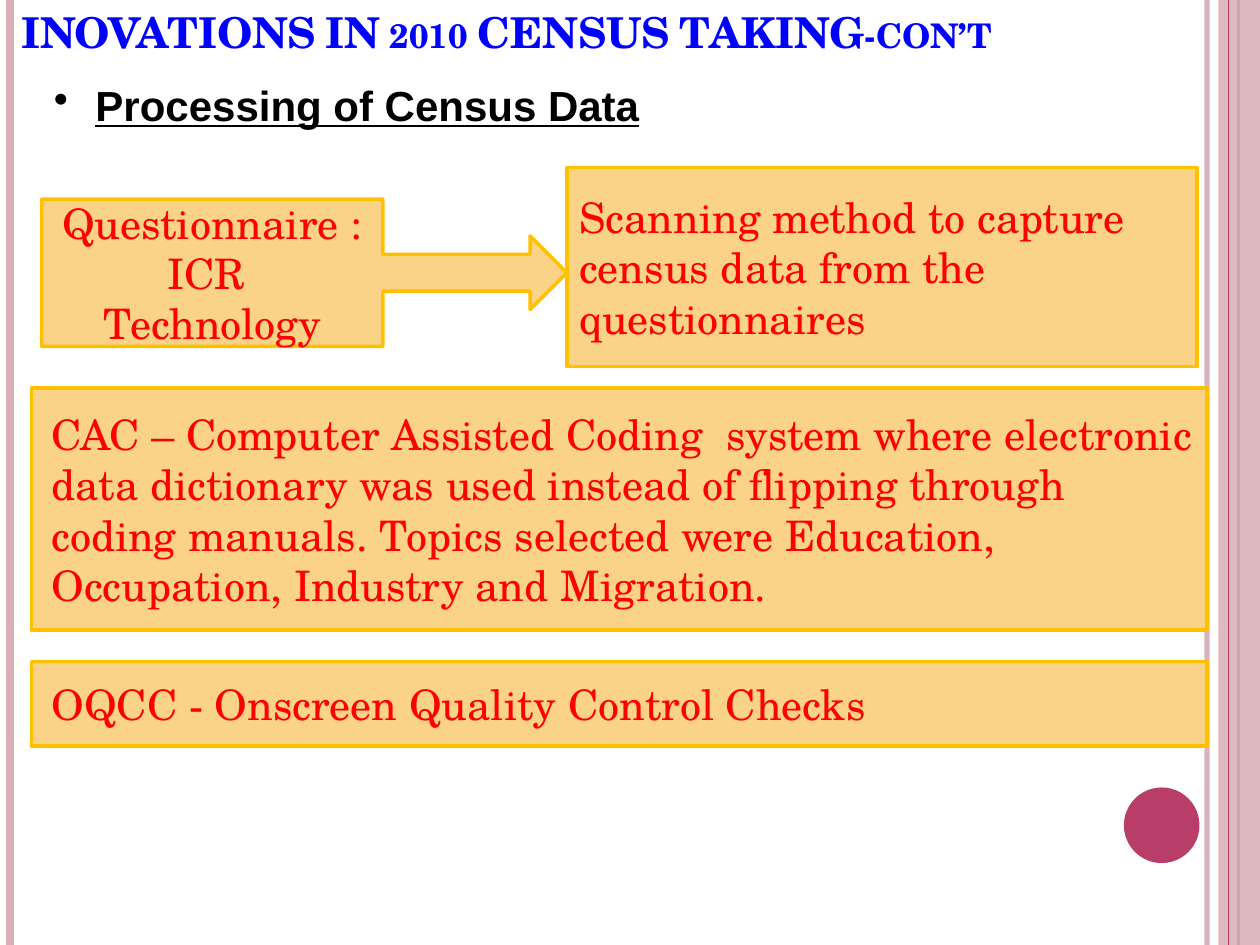
from dataclasses import dataclass
from typing import NamedTuple

from lxml.etree import SubElement as Sub
from pptx import Presentation
from pptx.dml.color import RGBColor as Rgb
from pptx.enum.shapes import MSO_CONNECTOR as Link, MSO_SHAPE as Kind
from pptx.enum.text import MSO_ANCHOR as Anchor, PP_ALIGN as Align
from pptx.oxml.ns import qn
from pptx.util import Inches, Pt


@dataclass(frozen=True)
class Theme:
    rose: str = "D8AFB9"
    wine: str = "B83D68"
    sand: str = "FBD388"
    gold: str = "FFC000"
    red: str = "FF0000"
    blue: str = "0000FF"
    black: str = "000000"
    serif: str = "TeX Gyre Schola"
    sans: str = "Arial"
    head: float = 24.3
    body: float = 24
    edge: float = 2


class Stripe(NamedTuple):
    x: float
    color: str
    width: float
    alpha: int = 100


class Box(NamedTuple):
    kind: Kind
    area: tuple
    text: str
    align: Align = Align.LEFT
    indent: float = 0
    inset: float = 0.1


LOOK = Theme()
WIDE, HIGH = 10, 7.5

STRIPES = [
    Stripe(9.58, LOOK.rose, 3, 93),
    Stripe(0.08, LOOK.rose, 4.5),
    Stripe(9.83, LOOK.wine, 1.5),
]
THIN = Stripe(9.75, LOOK.wine, 0.75)

BOXES = [
    Box(Kind.RECTANGLE, (4.5, 1.33, 5, 1.58),
        "Scanning method to capture census data from the questionnaires"),
    Box(Kind.RECTANGLE, (0.25, 3.08, 9.33, 1.92),
        "CAC – Computer Assisted Coding  system where electronic data "
        "dictionary was used instead of flipping through coding manuals. "
        "Topics selected were Education, Occupation, Industry and Migration.",
        indent=0.06),
    Box(Kind.RIGHT_ARROW_CALLOUT, (0.33, 1.58, 4.17, 1.17),
        "Questionnaire : ICR  Technology", Align.CENTER, inset=0.12),
    Box(Kind.RECTANGLE, (0.25, 5.25, 9.33, 0.67),
        "OQCC - Onscreen Quality Control Checks", indent=0.06),
]


def place(area: tuple) -> list:
    return [Inches(n) for n in area]


def fade(fill, alpha: int) -> None:
    """Set the opacity, in percent, of a solid fill element."""
    Sub(fill[0], qn("a:alpha"), val=str(alpha * 1000))


def write(frame, text: str, *, font: str = LOOK.serif, size: float = LOOK.body,
          color: str = LOOK.red, bold: bool = False, line: bool = False,
          caps: bool = False, align: Align = Align.LEFT,
          anchor: Anchor = Anchor.MIDDLE, inset: float = 0.1,
          indent: float = 0, bullet: str = "") -> None:
    frame.word_wrap = True
    frame.vertical_anchor = anchor
    frame.margin_left = frame.margin_right = Inches(inset)
    para = frame.paragraphs[0]
    para.alignment = align
    props = para._p.get_or_add_pPr()
    props.set("marL", str(Inches(indent)))
    if bullet:
        props.set("indent", str(-Inches(indent)))
        Sub(props, qn("a:buChar"), char=bullet)
    run = para.add_run()
    run.text = text
    face = run.font
    face.name, face.size, face.bold = font, Pt(size), bold
    face.underline = line
    face.color.rgb = Rgb.from_string(color)
    if caps:
        run._r.get_or_add_rPr().set("cap", "small")


def shape(slide, kind: Kind, area: tuple, fill: str, edge: str = ""):
    item = slide.shapes.add_shape(kind, *place(area))
    item.shadow.inherit = False
    item.fill.solid()
    item.fill.fore_color.rgb = Rgb.from_string(fill)
    if edge:
        item.line.color.rgb = Rgb.from_string(edge)
        item.line.width = Pt(LOOK.edge)
    else:
        item.line.fill.background()
    return item


def draw_stripe(slide, data: Stripe) -> None:
    ends = place((data.x, 0, data.x, HIGH))
    item = slide.shapes.add_connector(Link.STRAIGHT, *ends)
    item.line.color.rgb = Rgb.from_string(data.color)
    item.line.width = Pt(data.width)
    props = item._element.spPr
    Sub(props, qn("a:effectLst"))
    if data.alpha < 100:
        fade(props.find(".//" + qn("a:solidFill")), data.alpha)


def draw_box(slide, data: Box) -> None:
    item = shape(slide, data.kind, data.area, LOOK.sand, LOOK.gold)
    write(item.text_frame, data.text, align=data.align,
          indent=data.indent, inset=data.inset)


def draw_frame(slide) -> None:
    """Draw the side stripes, the right band and the dot."""
    for data in STRIPES:
        draw_stripe(slide, data)
    band = shape(slide, Kind.RECTANGLE, (9.67, 0, WIDE - 9.67, HIGH), LOOK.rose)
    fade(band._element.spPr.find(qn("a:solidFill")), 87)
    draw_stripe(slide, THIN)
    shape(slide, Kind.OVAL, (8.92, 6.25, 0.6, 0.6), LOOK.wine)


def main() -> None:
    deck = Presentation()
    deck.slide_width, deck.slide_height = place((WIDE, HIGH))
    slide = deck.slides.add_slide(deck.slide_layouts[5])
    draw_frame(slide)

    title = slide.shapes.title
    title.left, title.top, title.width, title.height = place((0, 0, 9.42, 0.5))
    write(title.text_frame, "INOVATIONS IN 2010 CENSUS TAKING-con’t",
          size=LOOK.head, color=LOOK.blue, bold=True, caps=True,
          anchor=Anchor.BOTTOM, inset=0.17)

    topic = slide.shapes.add_textbox(*place((0.33, 0.58, 5, 0.5)))
    write(topic.text_frame, "Processing of Census Data", font=LOOK.sans,
          color=LOOK.black, bold=True, line=True, anchor=Anchor.TOP,
          indent=0.33, bullet="•")

    for data in BOXES:
        draw_box(slide, data)
    deck.save("out.pptx")


if __name__ == "__main__":
    main()
